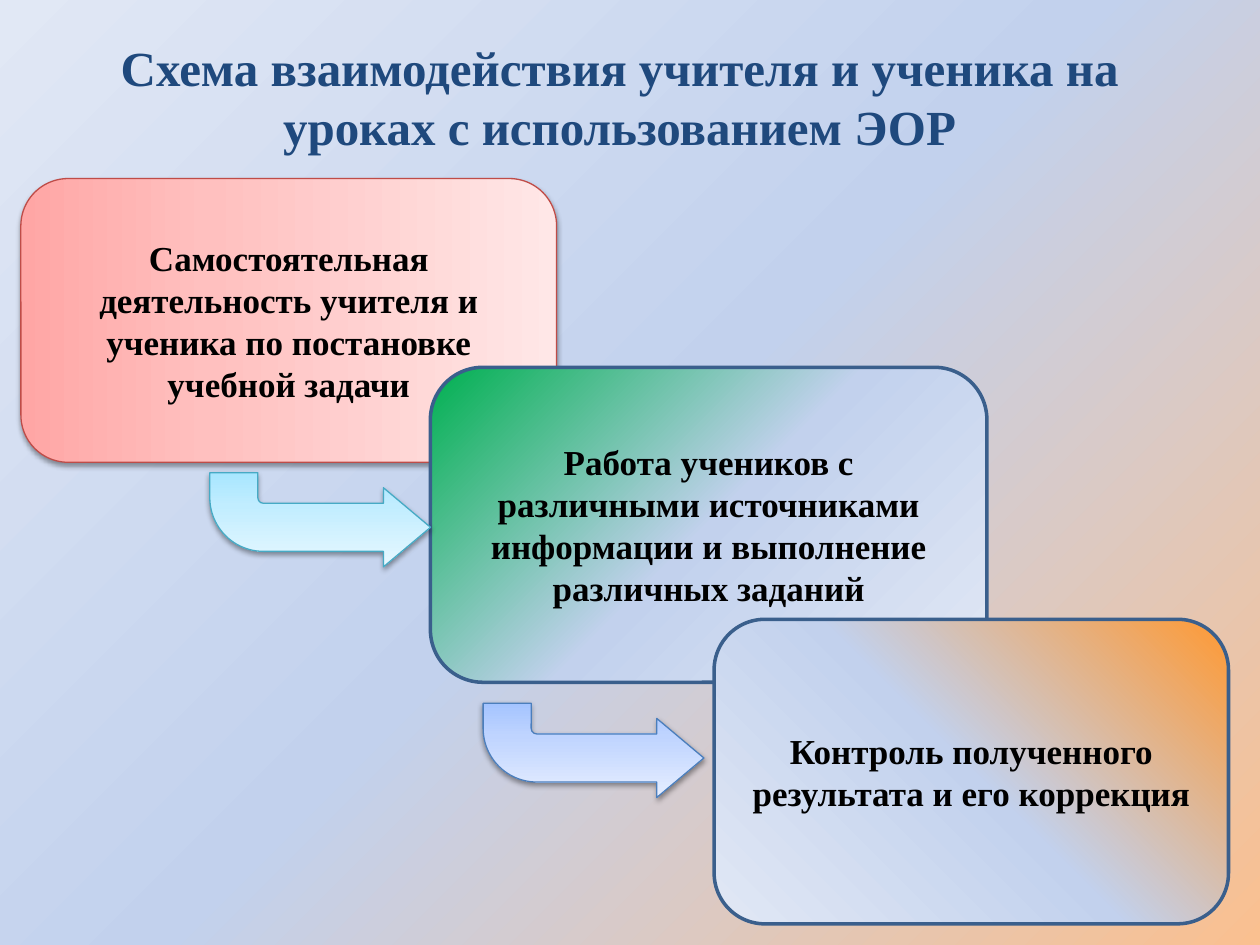
from copy import deepcopy

from pptx import Presentation
from pptx.dml.color import RGBColor
from pptx.enum.shapes import MSO_SHAPE
from pptx.enum.text import MSO_ANCHOR, MSO_AUTO_SIZE, PP_ALIGN
from pptx.oxml import parse_xml
from pptx.oxml.ns import nsdecls
from pptx.util import Cm, Pt

ROUNDED = MSO_SHAPE.ROUNDED_RECTANGLE
BENT_ARROW = MSO_SHAPE.BENT_ARROW
MIDDLE = MSO_ANCHOR.MIDDLE
CENTER = PP_ALIGN.CENTER
FIT_SHAPE = MSO_AUTO_SIZE.SHAPE_TO_FIT_TEXT

COLORS = {
    "title": "1F497D",
    "text": "000000",
    "blue_edge": "3A5F8C",
    "red_edge": "BF4C48",
    "aqua_edge": "46AAC5",
    "arrow_edge": "4B7EBC",
}
GRADIENTS = {
    "background": (("FAC090", "C2D1ED", "E1E8F5"), 0.5, 225),
    "red": (("FFA6A5", "FFC0BF", "FFE7E7"), 0.35, 270),
    "green": (("00B050", "C2D1ED", "E1E8F5"), 0.5, 315),
    "orange": (("FF9933", "C2D1ED", "E1E8F5"), 0.5, 45),
    "aqua": (("A7E6FF", "C1EDFF", "E7F8FF"), 0.35, 270),
    "blue": (("A4C4FF", "BFD4FF", "E6EEFF"), 0.35, 270),
}
FORMATS = {
    "title": {"name": "Times New Roman", "size": Pt(28), "bold": True},
    "text": {"name": "Times New Roman", "size": Pt(20), "bold": True},
}
ARROW_ADJUSTMENTS = (0.51, 0.42, 0.5, 0.57)
SHADOW = (
    f'<a:outerShdw {nsdecls("a")} blurRad="40000" dist="20000" dir="5400000" rotWithShape="0">'
    '<a:srgbClr val="000000"><a:alpha val="38000"/></a:srgbClr></a:outerShdw>'
)

TITLE = "Схема взаимодействия учителя и ученика на уроках с использованием ЭОР"
STEPS = (
    ("Самостоятельная деятельность учителя и ученика по постановке учебной задачи",
     (2.96, 1.06, 5.72, 10.8), "red", "red_edge", 0.75, True),
    ("Работа учеников с различными источниками информации и выполнение различных заданий",
     (11.11, 4.97, 6.35, 11.22), "green", "blue_edge", 2, False),
    ("Контроль полученного результата и его коррекция",
     (16.51, 10.37, 6.14, 10.37), "orange", "blue_edge", 2, False),
)
ARROWS = (
    ((4.23, 9.53, 4.45, 1.9), "aqua", "aqua_edge"),
    ((9.74, 14.18, 4.45, 1.9), "blue", "arrow_edge"),
)


class SlideBuilder:
    def __init__(self, slide):
        self.slide = slide

    def gradient(self, fill, element, name):
        colors, middle, angle = GRADIENTS[name]
        fill.gradient()
        fill.gradient_angle = 360 - angle
        stop_list = element.xpath(".//a:gsLst")[0]
        stop_list.append(deepcopy(stop_list[-1]))
        for stop, color, position in zip(fill.gradient_stops, colors, (0, middle, 1)):
            stop.color.rgb = RGBColor.from_string(color)
            stop.position = position

    def background(self, name):
        self.gradient(self.slide.background.fill, self.slide.element, name)

    def add_text(self, shape, text, style):
        frame = shape.text_frame
        frame.word_wrap = True
        paragraph = frame.paragraphs[0]
        paragraph.alignment = CENTER
        run = paragraph.add_run()
        run.text = text
        for attribute, value in FORMATS[style].items():
            setattr(run.font, attribute, value)
        run.font.color.rgb = RGBColor.from_string(COLORS[style])

    def title(self, text, box):
        shape = self.slide.shapes.add_textbox(*map(Cm, box))
        self.add_text(shape, text, "title")
        shape.text_frame.auto_size = FIT_SHAPE

    def shape(self, kind, box, fill, edge, width, shadow):
        shape = self.slide.shapes.add_shape(kind, *map(Cm, box))
        self.gradient(shape.fill, shape.element, fill)
        shape.line.color.rgb = RGBColor.from_string(COLORS[edge])
        shape.line.width = Pt(width)
        shape.shadow.inherit = False
        if shadow:
            shape.element.xpath("./p:spPr/a:effectLst")[0].append(parse_xml(SHADOW))
        return shape

    def step(self, text, box, fill, edge, width, shadow):
        shape = self.shape(ROUNDED, box, fill, edge, width, shadow)
        shape.rotation = 90
        shape.text_frame.vertical_anchor = MIDDLE
        shape.element.xpath(".//a:bodyPr")[0].set("vert", "vert270")
        self.add_text(shape, text, "text")

    def arrow(self, box, fill, edge):
        shape = self.shape(BENT_ARROW, box, fill, edge, 0.75, True)
        shape.element.xpath("./p:spPr/a:xfrm")[0].set("flipV", "1")
        for index, value in enumerate(ARROW_ADJUSTMENTS):
            shape.adjustments[index] = value


def main():
    presentation = Presentation()
    presentation.slide_width = Cm(25.4)
    presentation.slide_height = Cm(19.05)
    builder = SlideBuilder(presentation.slides.add_slide(presentation.slide_layouts[6]))
    builder.background("background")
    for step in STEPS:
        builder.step(*step)
    builder.title(TITLE, (0.64, 0.64, 23.7, 2.64))
    for arrow in ARROWS:
        builder.arrow(*arrow)
    presentation.save("out.pptx")


if __name__ == "__main__":
    main()
